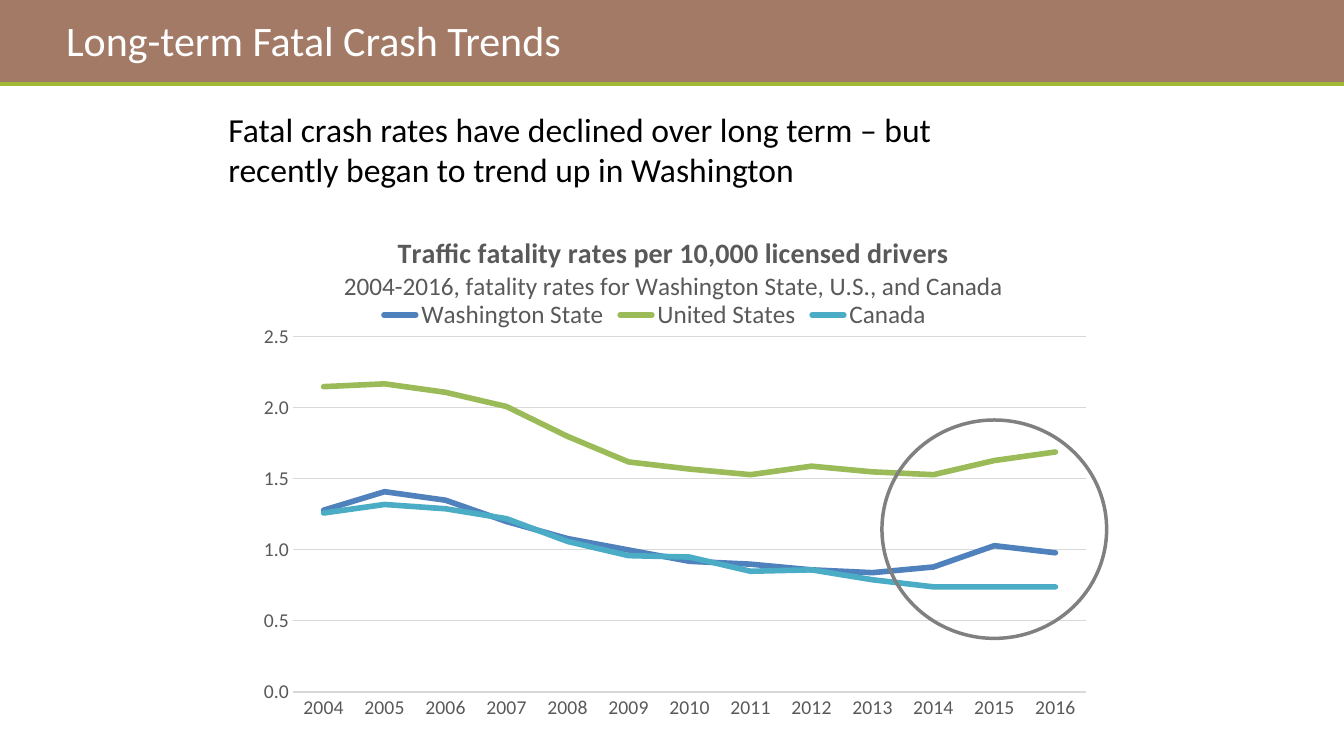
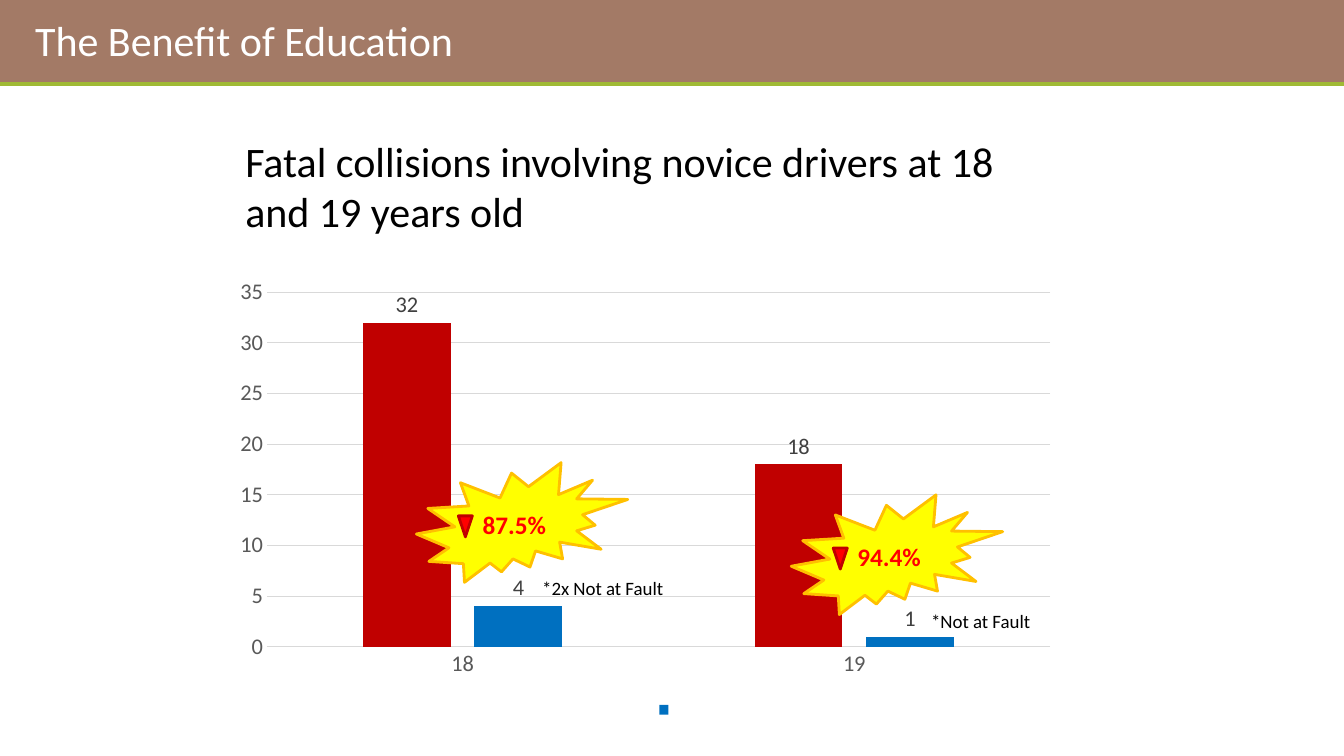
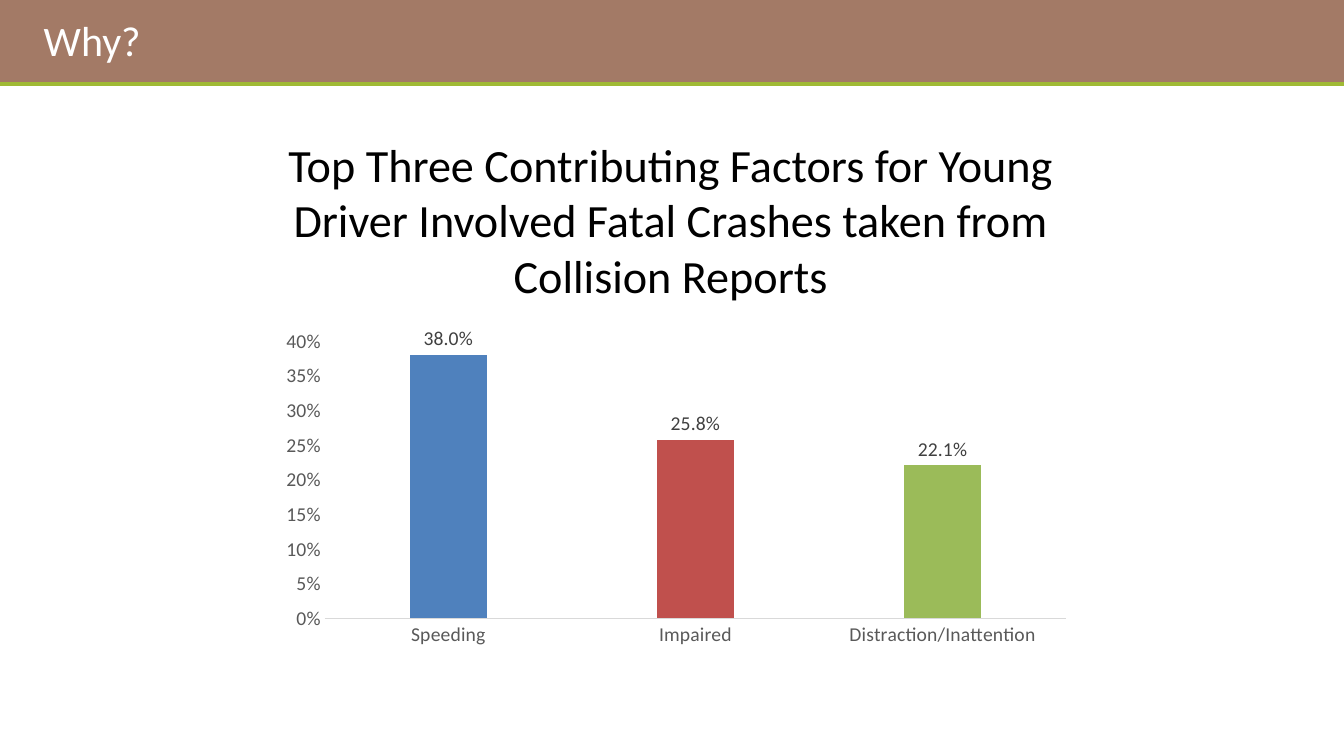
from lxml import etree
from pptx import Presentation
from pptx.chart.data import CategoryChartData
from pptx.dml.color import RGBColor
from pptx.enum.chart import (XL_CHART_TYPE, XL_LABEL_POSITION, XL_LEGEND_POSITION,
                             XL_MARKER_STYLE, XL_TICK_MARK)
from pptx.enum.shapes import MSO_CONNECTOR, MSO_SHAPE
from pptx.enum.text import MSO_ANCHOR, MSO_AUTO_SIZE, PP_ALIGN
from pptx.oxml.ns import qn
from pptx.util import Pt

LINE, COLUMN = XL_CHART_TYPE.LINE, XL_CHART_TYPE.COLUMN_CLUSTERED
OUTSIDE, TOP_KEY = XL_LABEL_POSITION.OUTSIDE_END, XL_LEGEND_POSITION.TOP
NO_MARK, NO_TICK = XL_MARKER_STYLE.NONE, XL_TICK_MARK.NONE
RECT, OVAL = MSO_SHAPE.RECTANGLE, MSO_SHAPE.OVAL
BURST, WEDGE = MSO_SHAPE.EXPLOSION2, MSO_SHAPE.ISOSCELES_TRIANGLE
STRAIGHT, NO_FIT = MSO_CONNECTOR.STRAIGHT, MSO_AUTO_SIZE.NONE
LEFT, CENTER = PP_ALIGN.LEFT, PP_ALIGN.CENTER
TOP, MIDDLE = MSO_ANCHOR.TOP, MSO_ANCHOR.MIDDLE

FONT = "Calibri"
BROWN, LIME = RGBColor(0xA3, 0x7A, 0x66), RGBColor(0xA0, 0xBA, 0x35)
BLACK, WHITE = RGBColor(0, 0, 0), RGBColor(255, 255, 255)
DARK, GRAY = RGBColor(0x40, 0x40, 0x40), RGBColor(0x59, 0x59, 0x59)
MID, PALE = RGBColor(0x80, 0x80, 0x80), RGBColor(0xD9, 0xD9, 0xD9)
BLUE, GREEN = RGBColor(0x4F, 0x81, 0xBD), RGBColor(0x9B, 0xBB, 0x59)
AQUA, BRICK = RGBColor(0x4B, 0xAC, 0xC6), RGBColor(0xC0, 0x50, 0x4D)
CRIMSON, AZURE = RGBColor(0xC0, 0, 0), RGBColor(0, 0x70, 0xC0)
RED, YELLOW, GOLD = RGBColor(255, 0, 0), RGBColor(255, 255, 0), RGBColor(255, 0xC0, 0)

WIDTH, HEIGHT, BAND = 960, 540, 60

TRENDS = {
    "kind": LINE, "box": (169, 150, 621, 378), "area": (0.065, 0.24, 0.912, 0.671),
    "cats": [str(year) for year in range(2004, 2017)],
    "series": [
        ("Washington State", BLUE,
         (1.28, 1.41, 1.35, 1.2, 1.08, 1, 0.92, 0.9, 0.86, 0.84, 0.88, 1.03, 0.98)),
        ("United States", GREEN,
         (2.15, 2.17, 2.11, 2.01, 1.8, 1.62, 1.57, 1.53, 1.59, 1.55, 1.53, 1.63, 1.69)),
        ("Canada", AQUA,
         (1.26, 1.32, 1.29, 1.22, 1.06, 0.96, 0.95, 0.85, 0.86, 0.79, 0.74, 0.74, 0.74)),
    ],
    "size": 14, "top": 2.5, "step": 0.5, "format": "0.0", "grid": True,
}
TITLE = [("Traffic fatality rates per 10,000 licensed drivers", 20, True),
         ("2004-2016, fatality rates for Washington State, U.S., and Canada", 18, False)]
NOVICE = {
    "kind": COLUMN, "box": (168, 170, 594, 340), "area": (0.038, 0.114, 0.942, 0.745),
    "cats": ["18", "19"],
    "series": [("Series 1", CRIMSON, (32, 18)), ("Series 2", AZURE, (4, 1))],
    "size": 16, "top": 35, "step": 5, "format": "#,##0", "labels": "#,##0", "grid": True,
}
FACTORS = {
    "kind": COLUMN, "box": (183.6, 166.3, 590.4, 331.2),
    "area": (0.082, 0.234, 0.897, 0.598),
    "cats": ["Speeding", "Impaired", "Distraction/Inattention"],
    "series": [("Series 1", BLUE, (0.38, 0.258, 0.221))],
    "points": [BLUE, BRICK, GREEN],
    "size": 14, "top": 0.4, "step": 0.05, "format": "0%", "labels": "0.0%", "grid": False,
}
BURSTS = [("87.5%", 297.4, 330.5), ("94.4%", 565.2, 353.5)]
NOTES = [("*Not at Fault", 658, 432, 86.4), ("*2x Not at Fault", 380.2, 408.2, 102.2)]


def write(frame, text, size=30, color=BLACK, bold=False, align=LEFT, anchor=TOP, wrap=True):
    frame.word_wrap, frame.auto_size = wrap, NO_FIT
    frame.vertical_anchor = anchor
    frame.text = text
    para = frame.paragraphs[0]
    para.alignment = align
    font = para.runs[0].font
    font.name, font.size, font.bold = FONT, Pt(size), bold
    font.color.rgb = color


def place(shape, *box):
    shape.left, shape.top, shape.width, shape.height = map(Pt, box)


def label(slide, text, box, **style):
    write(slide.shapes.add_textbox(*map(Pt, box)).text_frame, text, **style)


def head(left, width=492):
    """Box of a heading within the band."""
    return left, 12, width, 32.4


def draw(slide, kind, box, fill=None, line=None, weight=2):
    shape = slide.shapes.add_shape(kind, *map(Pt, box))
    shape.shadow.inherit = False
    if fill is None:
        shape.fill.background()
    else:
        shape.fill.solid()
        shape.fill.fore_color.rgb = fill
    if line is None:
        shape.line.fill.background()
    else:
        shape.line.color.rgb, shape.line.width = line, Pt(weight)
    return shape


def band(slide, layout):
    """Put the heading band and its rule on the layout."""
    bar = draw(slide, RECT, (0, 0, WIDTH, BAND), BROWN)
    rule = slide.shapes.add_connector(STRAIGHT, 0, Pt(BAND), Pt(WIDTH), Pt(BAND))
    rule.line.color.rgb, rule.line.width = LIME, Pt(3)
    etree.SubElement(rule.element.spPr, qn("a:effectLst"))
    for spot, shape in enumerate((bar, rule), 2):
        layout.shapes.element.insert(spot, shape.element)


def arrange(chart, tag, spot, **sides):
    """Fix the place of a chart part as shares of the chart."""
    part = chart.element.find(".//" + qn(tag))
    for old in part.findall(qn("c:layout")):
        part.remove(old)
    layout = etree.Element(qn("c:layout"))
    manual = etree.SubElement(layout, qn("c:manualLayout"))
    if tag == "c:plotArea":
        etree.SubElement(manual, qn("c:layoutTarget")).set("val", "inner")
    modes = {side + "Mode": "edge" for side in "xy"}
    for name, value in {**modes, **sides}.items():
        etree.SubElement(manual, qn("c:" + name)).set("val", str(value))
    part.insert(spot, layout)


def tint(font, size, color=GRAY):
    font.name, font.size = FONT, Pt(size)
    font.color.rgb = color


def thin(line):
    line.color.rgb, line.width = PALE, Pt(0.75)


def graph(slide, spec):
    data = CategoryChartData()
    data.categories = spec["cats"]
    for name, _, values in spec["series"]:
        data.add_series(name, values)
    chart = slide.shapes.add_chart(spec["kind"], *map(Pt, spec["box"]), data).chart
    tint(chart.font, spec["size"])
    chart.has_title = chart.has_legend = False
    arrange(chart, "c:plotArea", 0, **dict(zip("xywh", spec["area"])))

    cat, val = chart.category_axis, chart.value_axis
    for axis in (cat, val):
        axis.major_tick_mark = axis.minor_tick_mark = NO_TICK
        tint(axis.tick_labels.font, spec["size"])
    thin(cat.format.line)
    val.format.line.fill.background()
    val.minimum_scale, val.maximum_scale, val.major_unit = 0, spec["top"], spec["step"]
    val.tick_labels.number_format = spec["format"]
    val.tick_labels.number_format_is_linked = False
    val.has_major_gridlines = spec["grid"]
    if spec["grid"]:
        thin(val.major_gridlines.format.line)

    plot = chart.plots[0]
    plot.vary_by_categories = False
    for series, (_, color, _) in zip(plot.series, spec["series"]):
        if spec["kind"] == LINE:
            series.smooth, series.marker.style = False, NO_MARK
            series.format.line.color.rgb, series.format.line.width = color, Pt(4)
            series.format.line._get_or_add_ln().set("cap", "rnd")
        else:
            series.format.fill.solid()
            series.format.fill.fore_color.rgb = color
    for spot, color in enumerate(spec.get("points", [])):
        fill = plot.series[0].points[spot].format.fill
        fill.solid()
        fill.fore_color.rgb = color
    if spec["kind"] == COLUMN:
        plot.gap_width, plot.overlap = 219, -27
        plot.has_data_labels = True
        marks = plot.data_labels
        marks.show_value, marks.position = True, OUTSIDE
        marks.number_format, marks.number_format_is_linked = spec["labels"], False
        tint(marks.font, spec["size"], DARK)
    return chart


def caption(chart):
    """Add the two-line title and the legend below it."""
    chart.has_title = chart.has_legend = True
    frame = chart.chart_title.text_frame
    for spot, (text, size, bold) in enumerate(TITLE):
        para = frame.add_paragraph() if spot else frame.paragraphs[0]
        run = para.add_run()
        run.text, run.font.bold = text, bold
        tint(run.font, size)
    chart.chart_title.include_in_layout = False
    legend = chart.legend
    legend.position, legend.include_in_layout = TOP_KEY, False
    tint(legend.font, 18)
    arrange(chart, "c:title", 1, x=0.12, y=0.04)
    arrange(chart, "c:legend", 1, x=0.16, y=0.16)


def trends(slide):
    place(slide.shapes.title, *head(40, 656))
    write(slide.shapes.title.text_frame, "Long-term Fatal Crash Trends",
          color=WHITE, anchor=MIDDLE)
    caption(graph(slide, TRENDS))
    draw(slide, OVAL, (630, 300, 160.5, 156), line=MID, weight=2.5)
    label(slide, "Fatal crash rates have declined over long term – but "
          "recently began to trend up in Washington", (156, 74, 570, 68), size=24)


def novice(slide):
    graph(slide, NOVICE)
    for text, left, top in BURSTS:
        burst = draw(slide, BURST, (left, top, 151, 85.5), YELLOW, GOLD)
        write(burst.text_frame, text, size=18, color=RED, bold=True,
              align=CENTER, anchor=MIDDLE)
        draw(slide, WEDGE, (left + 30, top + 38, 10, 15), RED, CRIMSON).rotation = 180
    for text, left, top, width in NOTES:
        label(slide, text, (left, top, width, 23.8), size=13.5, wrap=False)
    draw(slide, RECT, (471, 503.5, 6.5, 7), AZURE)
    place(slide.shapes.title, 168, 90, 594, 85.7)
    write(slide.shapes.title.text_frame,
          "Fatal collisions involving novice drivers at 18 and 19 years old", anchor=MIDDLE)
    label(slide, "The Benefit of Education", head(18), color=WHITE, anchor=MIDDLE)


def factors(slide):
    graph(slide, FACTORS)
    label(slide, "Top Three Contributing Factors for Young Driver Involved Fatal Crashes "
          "taken from Collision Reports", (190, 93.6, 578, 127.4), size=33, align=CENTER)
    place(slide.shapes.title, *head(24))
    write(slide.shapes.title.text_frame, "Why?", color=WHITE, anchor=MIDDLE)


def main():
    deck = Presentation()
    deck.slide_width, deck.slide_height = Pt(WIDTH), Pt(HEIGHT)
    layout = deck.slide_layouts[5]
    slides = [deck.slides.add_slide(layout) for _ in range(3)]
    band(slides[0], layout)
    for build, slide in zip((trends, novice, factors), slides):
        build(slide)
    deck.save("out.pptx")


if __name__ == "__main__":
    main()
